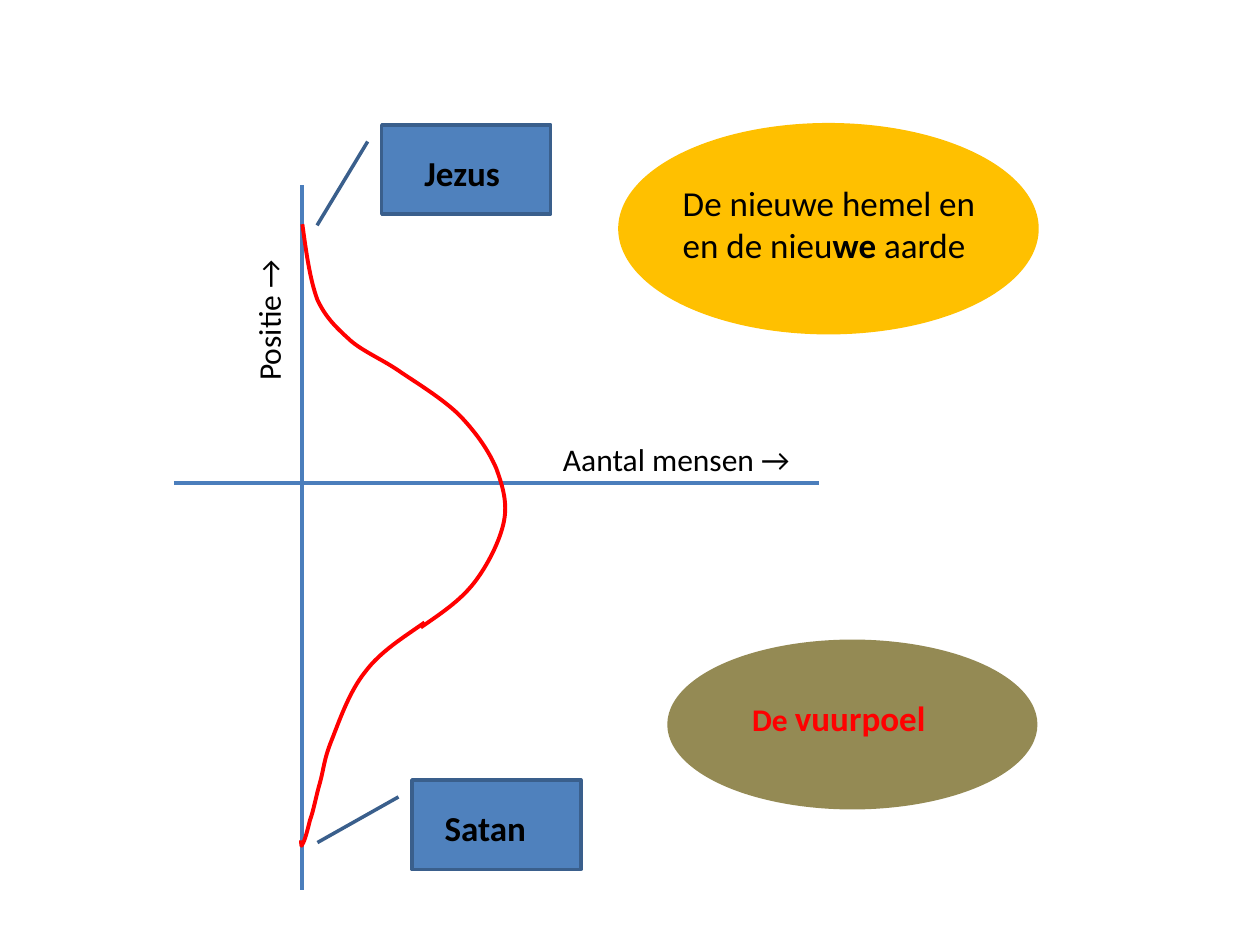
from dataclasses import dataclass

from lxml.etree import SubElement
from pptx import Presentation
from pptx.dml.color import RGBColor
from pptx.enum.shapes import MSO_CONNECTOR as Link, MSO_SHAPE as Preset
from pptx.enum.text import MSO_AUTO_SIZE as AutoSize
from pptx.oxml.ns import qn
from pptx.util import Emu, Pt

PX = 9144  # one px is a hundredth of an inch
BLACK, RED, AXIS = "000000", "FF0000", "4B7EBC"


@dataclass
class Box:
    left: int
    top: int
    width: int
    height: int

    def emu(self) -> list[Emu]:
        return [px(v) for v in (self.left, self.top, self.width, self.height)]


@dataclass
class Span:
    text: str
    size: int = 20
    color: str = BLACK
    bold: bool = False


@dataclass
class Label:
    box: Box
    lines: list[list[Span]]
    rotation: int = 0


@dataclass
class Form:
    preset: Preset
    box: Box
    fill: str
    border: str
    adjustments: tuple[float, ...] = ()


def px(value: int) -> Emu:
    return Emu(value * PX)


def rgb(color: str) -> RGBColor:
    return RGBColor.from_string(color)


def set_line(shape, color: str, width: float) -> None:
    shape.line.color.rgb = rgb(color)
    shape.line.width = Pt(width)


def draw_axis(shapes, x1: int, y1: int, x2: int, y2: int) -> None:
    axis = shapes.add_connector(Link.STRAIGHT, px(x1), px(y1), px(x2), px(y2))
    set_line(axis, AXIS, 2.25)
    SubElement(axis._element.spPr, qn("a:effectLst"))


def draw_curve(shapes, points: list[tuple[int, int]]) -> None:
    """Draw chained cubic segments: a start, then three points for each."""
    builder = shapes.build_freeform(*points[0], scale=PX)
    builder.add_line_segments(points[1:], close=False)
    curve = builder.convert_to_shape()
    curve.shadow.inherit = False
    curve.fill.background()
    set_line(curve, RED, 2.25)

    # Merge every three line segments into one Bézier segment
    outline = next(curve._element.iter(qn("a:path")))
    lines = outline.findall(qn("a:lnTo"))
    for first in range(0, len(lines), 3):
        bezier = SubElement(outline, qn("a:cubicBezTo"))
        for line in lines[first:first + 3]:
            bezier.append(line[0])
            outline.remove(line)


def draw_form(shapes, form: Form) -> None:
    shape = shapes.add_shape(form.preset, *form.box.emu())
    shape.shadow.inherit = False
    shape.fill.solid()
    shape.fill.fore_color.rgb = rgb(form.fill)
    set_line(shape, form.border, 2)
    for index, value in enumerate(form.adjustments):
        shape.adjustments[index] = value


def draw_label(shapes, label: Label) -> None:
    box = shapes.add_textbox(*label.box.emu())
    box.rotation = label.rotation
    frame = box.text_frame
    frame.word_wrap = True
    frame.auto_size = AutoSize.SHAPE_TO_FIT_TEXT
    for index, line in enumerate(label.lines):
        para = frame.add_paragraph() if index else frame.paragraphs[0]
        for span in line:
            run = para.add_run()
            run.text = span.text
            run.font.name = "Calibri"
            run.font.size = Pt(span.size)
            run.font.bold = span.bold
            run.font.color.rgb = rgb(span.color)


AXES = [(240, 147, 240, 706), (138, 383, 650, 383)]

CURVES = [
    [(240, 178), (243, 200), (246, 222), (252, 238),
     (259, 253), (268, 261), (279, 271), (290, 280), (305, 286), (319, 296),
     (334, 306), (355, 319), (367, 332), (379, 345), (388, 358), (394, 372),
     (399, 386), (403, 399), (400, 414), (397, 429), (387, 449), (376, 463),
     (365, 477), (350, 487), (334, 498)],
    [(337, 494), (320, 506), (302, 517), (290, 533),
     (277, 549), (269, 573), (263, 588), (257, 603), (257, 610), (254, 621),
     (251, 631), (249, 643), (246, 651), (244, 659), (242, 667), (240, 670),
     (239, 673), (239, 670), (239, 667)],
]

DESTINATIONS = [
    (Form(Preset.OVAL, Box(492, 99, 331, 165), "FFC000", "FFC000"),
     Label(Box(532, 139, 268, 77), [
         [Span("De nieuwe hemel en")],
         [Span("en de nieu"), Span("we ", bold=True), Span("aarde")]])),
    (Form(Preset.OVAL, Box(531, 509, 291, 132), "948A54", "948A54"),
     Label(Box(587, 548, 181, 44), [
         [Span("De ", 18, RED, True), Span("vuurpoel", 20, RED, True)]])),
]

CALLOUTS = [
    Form(Preset.LINE_CALLOUT_1, Box(303, 99, 134, 71), "4F81BD", "3A5F8C"),
    Form(Preset.LINE_CALLOUT_1, Box(327, 619, 134, 71), "4F81BD", "3A5F8C",
         (0.19, -0.08, 0.7, -0.56)),
]

LABELS = [
    Label(Box(327, 115, 87, 44), [[Span("Jezus", bold=True)]]),
    Label(Box(343, 635, 110, 44), [[Span("Satan", bold=True)]]),
    Label(Box(437, 344, 213, 40), [[Span("Aantal mensen →", 18)]]),
    Label(Box(99, 178, 228, 40), [[Span("Positie →", 18)]], 270),
]


def main() -> None:
    deck = Presentation()
    deck.slide_width, deck.slide_height = px(1000), px(750)
    page = deck.slides.add_slide(deck.slide_layouts[6])

    # Axes and the distribution curve
    for axis in AXES:
        draw_axis(page.shapes, *axis)
    for curve in CURVES:
        draw_curve(page.shapes, curve)

    # Destinations: an ellipse grouped with its text
    for form, label in DESTINATIONS:
        group = page.shapes.add_group_shape()
        draw_form(group.shapes, form)
        draw_label(group.shapes, label)

    # Callouts, their names and the axis titles
    for callout in CALLOUTS:
        draw_form(page.shapes, callout)
    for label in LABELS:
        draw_label(page.shapes, label)

    deck.save("out.pptx")


if __name__ == "__main__":
    main()
